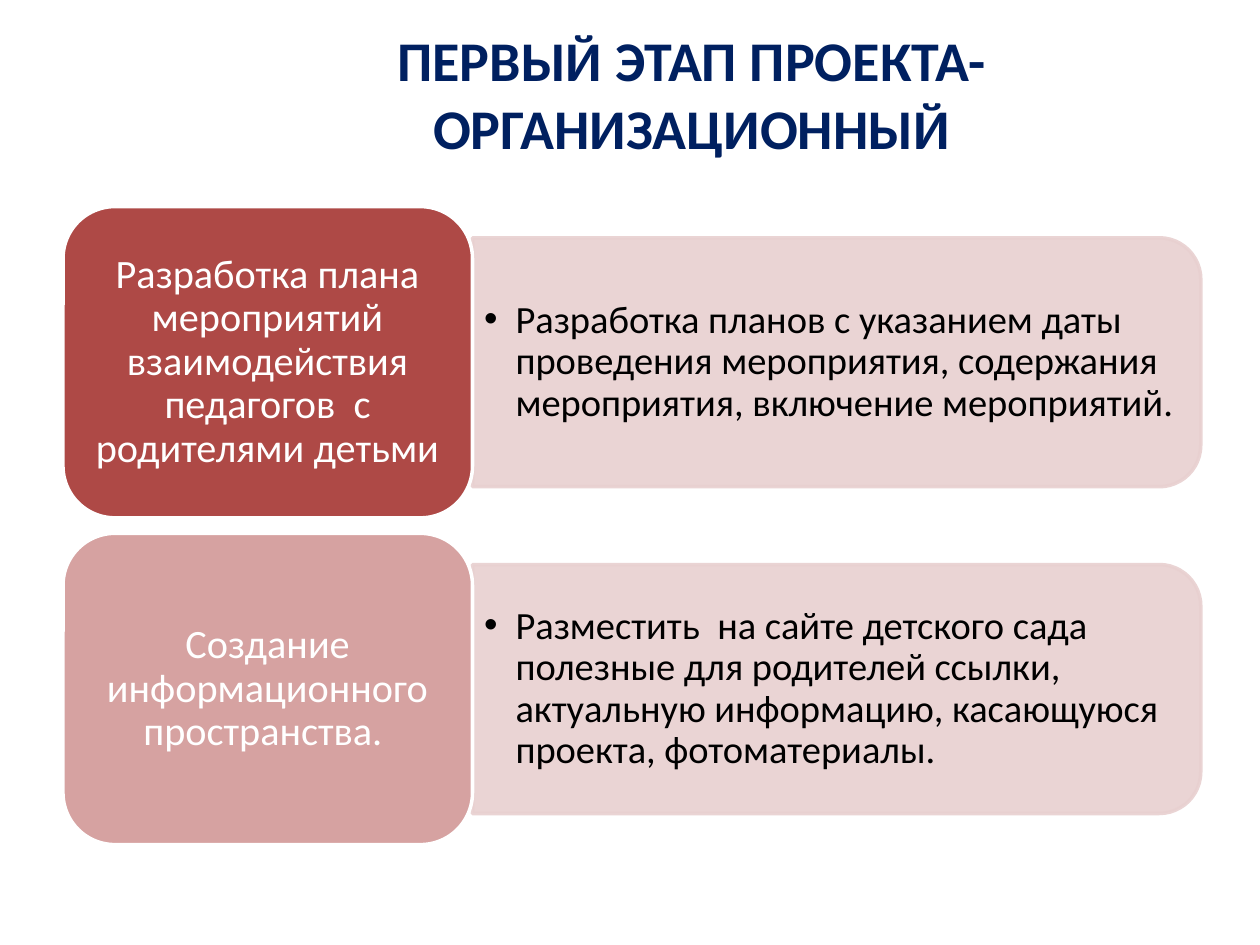
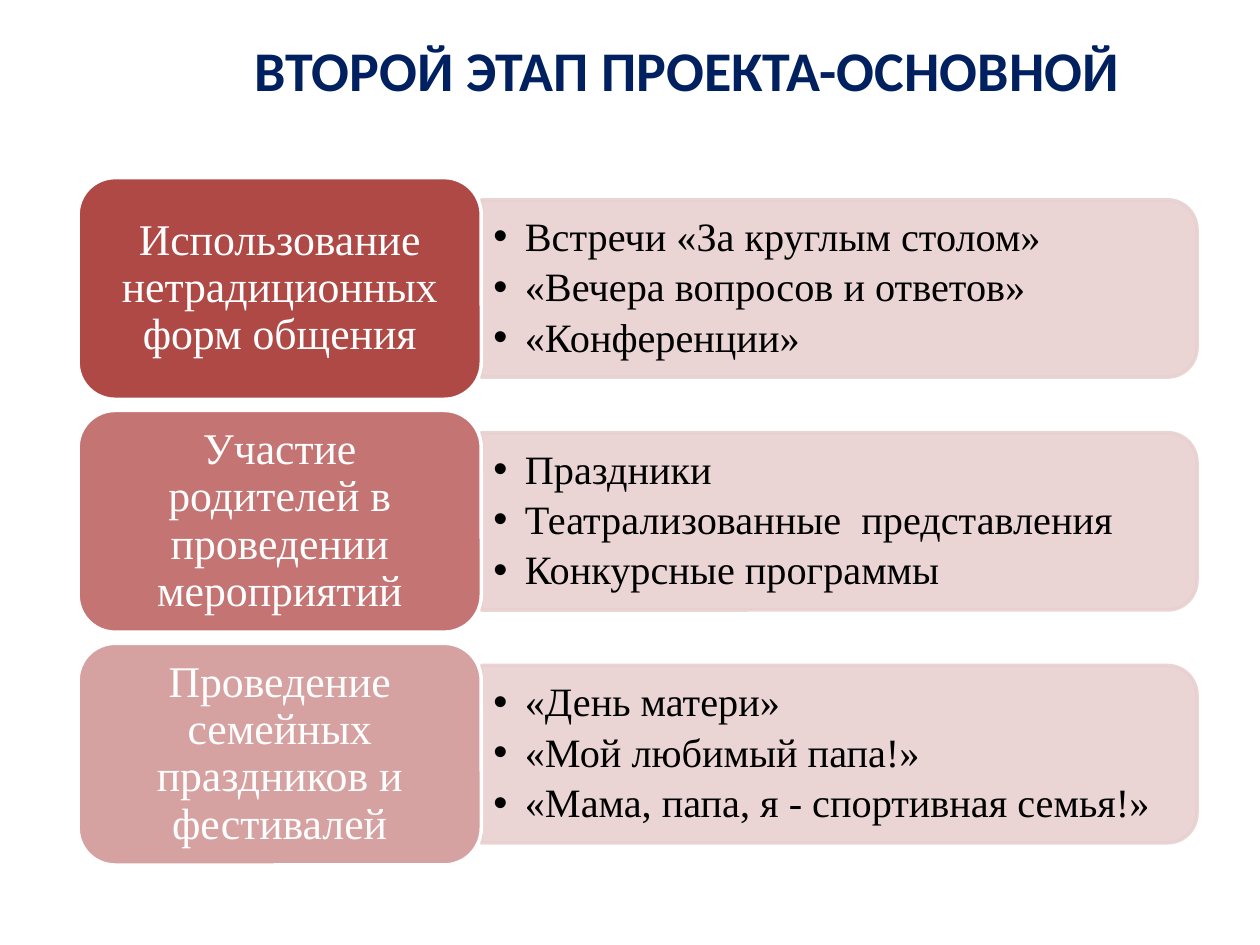
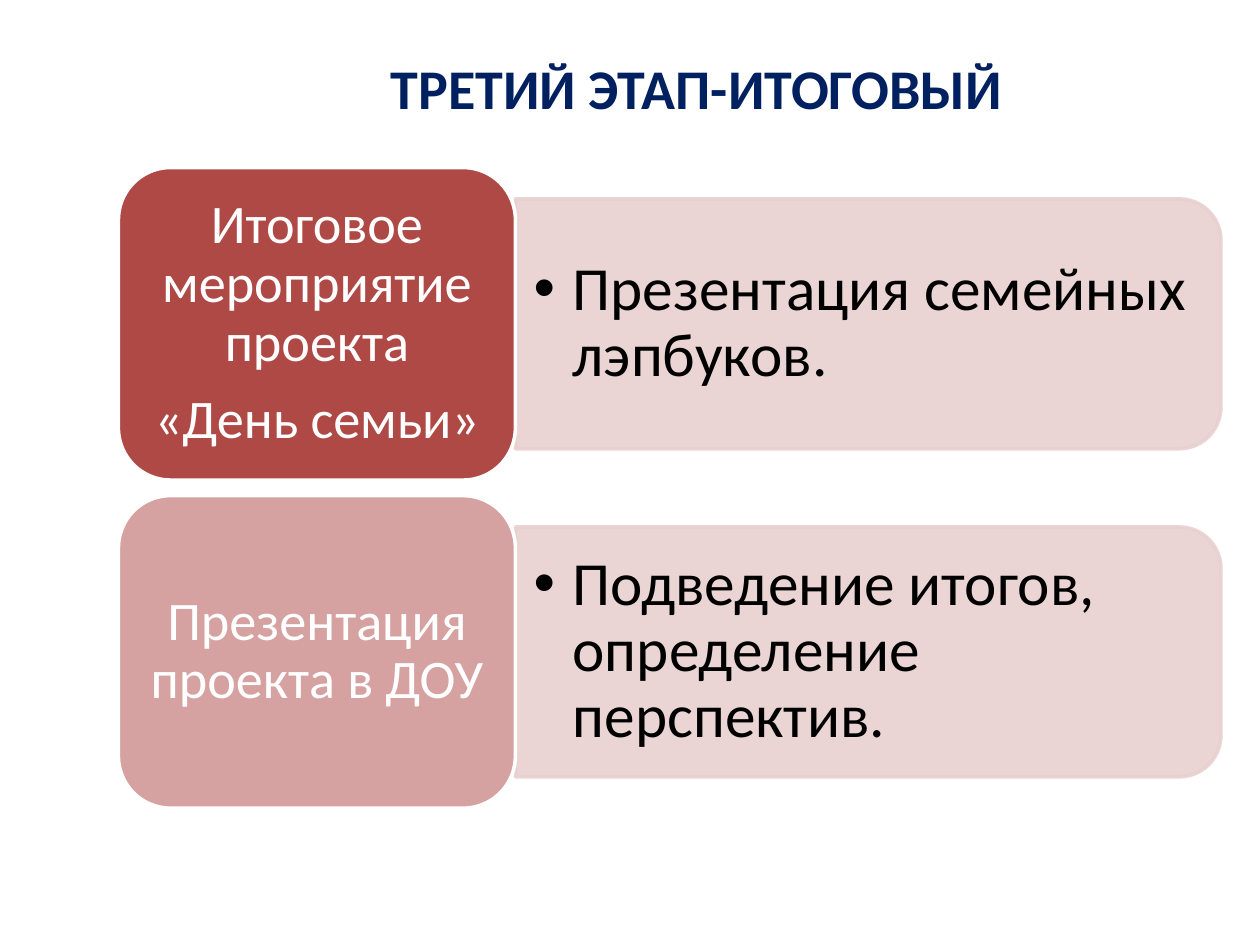
from lxml.etree import SubElement
from pptx import Presentation
from pptx.dml.color import RGBColor
from pptx.enum.shapes import MSO_SHAPE
from pptx.enum.text import MSO_ANCHOR, PP_ALIGN
from pptx.oxml.ns import qn
from pptx.util import Inches, Pt

NAVY, WHITE, BLACK, PALE = "002060", "FFFFFF", "000000", "E8D0D0"
DARK_RED, MID_RED, LIGHT_RED = "AE4946", "C47472", "D6A2A1"
RIGHT_TEXT_INSET = 0.1

STAGES = [
    {
        "title": "ПЕРВЫЙ ЭТАП ПРОЕКТА- ОРГАНИЗАЦИОННЫЙ",
        "title_at": (1.48, 0, 8.02, 1.48),
        "font": "Calibri", "label_size": 23, "detail_size": 22, "indent": 0.25,
        "left": 0.5, "top": 1.64, "label_width": 3.25, "label_height": 2.47, "panel_width": 5.78,
        "rows": [
            (DARK_RED, ["Разработка плана мероприятий взаимодействия педагогов  с родителями детьми"],
             ["Разработка планов с указанием даты проведения мероприятия, содержания мероприятия, "
              "включение мероприятий."]),
            (LIGHT_RED, ["Создание информационного пространства. "],
             ["Разместить  на сайте детского сада полезные для родителей ссылки, актуальную "
              "информацию, касающуюся проекта, фотоматериалы."]),
        ],
    },
    {
        "title": "ВТОРОЙ ЭТАП ПРОЕКТА-ОСНОВНОЙ",
        "title_at": (1.41, 0.16, 8.09, 0.78),
        "font": "Times New Roman", "label_size": 25, "detail_size": 23, "indent": 0.25,
        "left": 0.62, "top": 1.41, "label_width": 3.2, "label_height": 1.76, "panel_width": 5.68,
        "rows": [
            (DARK_RED, ["Использование нетрадиционных форм общения"],
             ["Встречи «За круглым столом»", "«Вечера вопросов и ответов»", "«Конференции»"]),
            (MID_RED, ["Участие родителей в проведении мероприятий"],
             ["Праздники", "Театрализованные  представления", "Конкурсные программы"]),
            (LIGHT_RED, ["Проведение семейных праздников и фестивалей"],
             ["«День матери»", "«Мой любимый папа!»", "«Мама, папа, я - спортивная семья!»"]),
        ],
    },
    {
        "title": "ТРЕТИЙ ЭТАП-ИТОГОВЫЙ",
        "title_at": (1.56, 0.3, 7.94, 0.79),
        "font": "Calibri", "label_size": 31, "detail_size": 35, "indent": 0.31,
        "left": 0.94, "top": 1.33, "label_width": 3.15, "label_height": 2.48, "panel_width": 5.6,
        "rows": [
            (DARK_RED, ["Итоговое мероприятие проекта", "«День семьи» "],
             ["Презентация семейных лэпбуков."]),
            (LIGHT_RED, ["Презентация проекта в ДОУ"],
             ["Подведение итогов, определение перспектив."]),
        ],
    },
]


def color(value):
    """Turn a hex string into a colour."""
    return RGBColor.from_string(value)


def write(frame, lines, *, font, size, fill, bold=False, align=PP_ALIGN.CENTER,
          spacing=None, after=0, indent=None):
    """Fill a text frame with one formatted paragraph per line."""
    frame.word_wrap = True
    frame.vertical_anchor = MSO_ANCHOR.MIDDLE
    for number, line in enumerate(lines):
        paragraph = frame.add_paragraph() if number else frame.paragraphs[0]
        paragraph.alignment = align
        paragraph.line_spacing = spacing
        paragraph.space_after = Pt(after)
        if indent:
            properties = paragraph._p.get_or_add_pPr()
            properties.set("marL", str(Inches(indent)))
            properties.set("indent", str(-Inches(indent)))
            SubElement(properties, qn("a:buFont"), typeface="Arial")
            SubElement(properties, qn("a:buChar"), char="•")
        run = paragraph.add_run()
        run.text = line
        run.font.name = font
        run.font.size = Pt(size)
        run.font.bold = bold
        run.font.color.rgb = color(fill)


def set_insets(frame, size):
    """Scale the text margins with the text size."""
    frame.margin_left = frame.margin_right = Pt(0.3 * size)
    frame.margin_top = frame.margin_bottom = Pt(0.15 * size)


def add_block(slide, kind, box, fill, line, alpha=None):
    """Draw a filled preset shape, with transparency if alpha is given."""
    block = slide.shapes.add_shape(kind, *map(Inches, box))
    block.shadow.inherit = False
    block.fill.solid()
    block.fill.fore_color.rgb = color(fill)
    block.line.color.rgb = color(line)
    block.line.width = Pt(2)
    if alpha:
        for tint in block._element.spPr.iter(qn("a:srgbClr")):
            SubElement(tint, qn("a:alpha"), val=str(alpha * 1000))
    return block


def add_row(slide, stage, top, row):
    """Draw one label with its panel of details."""
    label_color, label_lines, details = row
    height, width = stage["label_height"], stage["panel_width"]
    middle = top + height / 2
    panel_left = stage["left"] + stage["label_width"]
    panel_height = 0.8 * height
    panel = add_block(
        slide, MSO_SHAPE.ROUND_2_SAME_RECTANGLE,
        (panel_left + (width - panel_height) / 2, middle - width / 2, panel_height, width),
        PALE, PALE, alpha=90)
    panel.rotation = 90

    detail_height = 0.9 * panel_height
    detail_box = slide.shapes.add_textbox(*map(Inches, (
        panel_left, middle - detail_height / 2, width - RIGHT_TEXT_INSET, detail_height)))
    detail_size, label_size = stage["detail_size"], stage["label_size"]
    set_insets(detail_box.text_frame, detail_size)
    write(detail_box.text_frame, details, font=stage["font"], size=detail_size, fill=BLACK,
          align=PP_ALIGN.LEFT, spacing=0.9, after=round(0.15 * detail_size + 0.5),
          indent=stage["indent"])

    label = add_block(slide, MSO_SHAPE.ROUNDED_RECTANGLE,
                      (stage["left"], top, stage["label_width"], height), label_color, WHITE)
    set_insets(label.text_frame, label_size)
    write(label.text_frame, label_lines, font=stage["font"], size=label_size, fill=WHITE,
          spacing=0.9, after=round(0.35 * label_size))


def add_stage(deck, stage):
    """Add a slide for one stage of the project."""
    slide = deck.slides.add_slide(deck.slide_layouts[5])
    title = slide.shapes.title
    title.left, title.top, title.width, title.height = map(Inches, stage["title_at"])
    write(title.text_frame, [stage["title"]], font="Calibri", size=32, fill=NAVY, bold=True)
    pitch = 1.05 * stage["label_height"]
    for number, row in enumerate(stage["rows"]):
        add_row(slide, stage, stage["top"] + number * pitch, row)


def main():
    """Build and save the deck."""
    deck = Presentation()
    deck.slide_width, deck.slide_height = Inches(10), Inches(7.5)
    for stage in STAGES:
        add_stage(deck, stage)
    deck.save("out.pptx")


if __name__ == "__main__":
    main()
